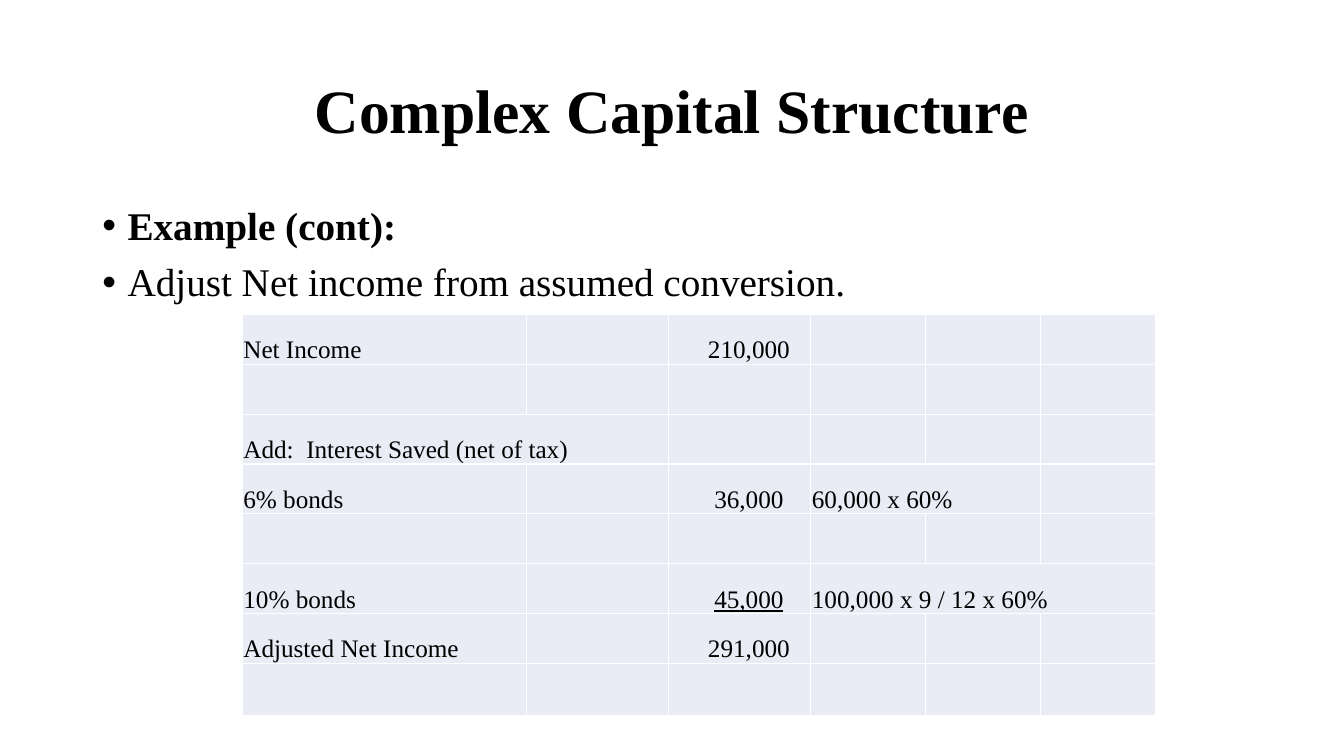
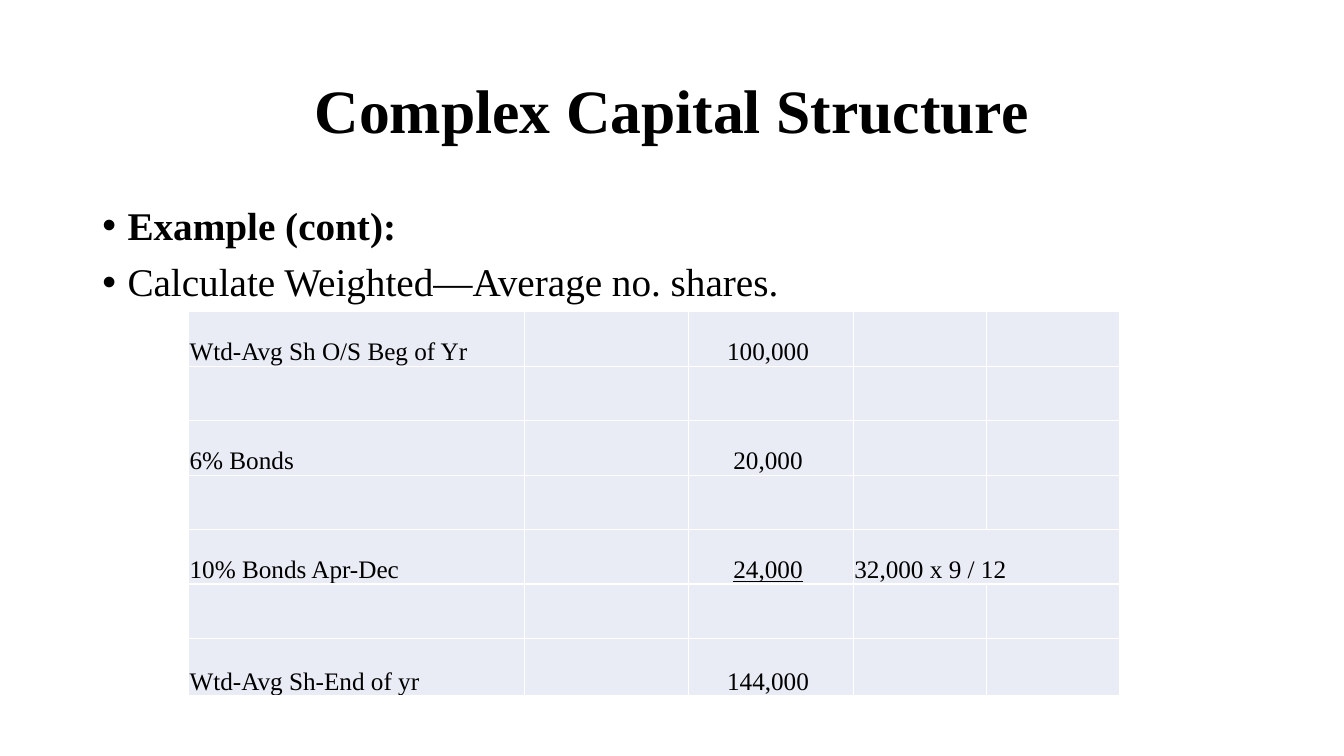
from dataclasses import dataclass

from lxml.etree import SubElement
from pptx import Presentation
from pptx.dml.color import RGBColor
from pptx.enum.text import MSO_ANCHOR as Anchor, PP_ALIGN as Align
from pptx.oxml.ns import qn
from pptx.util import Inches, Pt


@dataclass(frozen=True)
class Theme:
    font: str = "Times New Roman"
    ink: RGBColor = RGBColor(0x00, 0x00, 0x00)
    cell_fill: RGBColor = RGBColor(0xE9, 0xEB, 0xF5)
    border: str = "FFFFFF"
    border_width: int = Pt(1)
    title_size: int = Pt(44)
    body_size: int = Pt(28)
    table_size: int = Pt(18)
    inset: int = Inches(0.01)
    bullet_indent: int = Inches(0.25)


theme = Theme()
presentation = Presentation()
presentation.slide_width = Inches(13.33)
presentation.slide_height = Inches(7.5)

# The page is a grid of 160 columns by 90 rows.
COLUMN = presentation.slide_width / 160
ROW = presentation.slide_height / 90
TEXT_LEFT, TEXT_WIDTH = 11, 138
NUMBER_COLUMN = 2

# Each entry is (row, column): (text, columns spanned).
pages = [
    dict(
        bullet="Adjust Net income from assumed conversion.",
        body_rows=57.1,
        table_at=(28.85, 37.45),
        columns=[33.85, 16.92, 16.92] + [13.68] * 3,
        rows=[5.93] * 7 + [6.24],
        number_insets=(Inches(0.19), theme.inset),
        underlined=(5, NUMBER_COLUMN),
        entries={
            (0, 0): ("Net Income", 1),
            (0, 2): ("210,000", 1),
            (2, 0): ("Add:  Interest Saved (net of tax)", 2),
            (3, 0): ("6% bonds", 1),
            (3, 2): ("36,000", 1),
            (3, 3): ("60,000 x 60%", 2),
            (5, 0): ("10% bonds", 1),
            (5, 2): ("45,000", 1),
            (5, 3): ("100,000 x 9 / 12 x 60%", 3),
            (6, 0): ("Adjusted Net Income", 1),
            (6, 2): ("291,000", 1),
        },
    ),
    dict(
        bullet="Calculate Weighted—Average no. shares.",
        body_rows=61.2,
        table_at=(22.45, 37.1),
        columns=[39.95, 19.6, 19.6] + [15.85] * 2,
        rows=[6.49] * 6 + [6.8],
        number_insets=(theme.inset, Inches(0.07)),
        underlined=(4, NUMBER_COLUMN),
        entries={
            (0, 0): ("Wtd-Avg Sh O/S Beg of Yr", 1),
            (0, 2): ("100,000", 1),
            (2, 0): ("6% Bonds", 1),
            (2, 2): ("20,000", 1),
            (4, 0): ("10% Bonds Apr-Dec", 1),
            (4, 2): ("24,000", 1),
            (4, 3): ("32,000 x 9 / 12", 2),
            (6, 0): ("Wtd-Avg Sh-End of yr", 1),
            (6, 2): ("144,000", 1),
        },
    ),
]


def write(paragraph, text, size, bold=False):
    paragraph.text = text
    paragraph.font.name = theme.font
    paragraph.font.size = size
    paragraph.font.bold = bold
    paragraph.font.color.rgb = theme.ink


def add_text_frame(slide, top, rows):
    """Add a text box across the text columns and return its frame."""
    box = slide.shapes.add_textbox(
        round(TEXT_LEFT * COLUMN), round(top * ROW), round(TEXT_WIDTH * COLUMN), round(rows * ROW)
    )
    box.text_frame.word_wrap = True
    return box.text_frame


for page in pages:
    slide = presentation.slides.add_slide(presentation.slide_layouts[6])

    title_frame = add_text_frame(slide, 4.8, 17.4)
    title_frame.vertical_anchor = Anchor.MIDDLE
    title = title_frame.paragraphs[0]
    write(title, "Complex Capital Structure", theme.title_size, bold=True)
    title.alignment = Align.CENTER
    title.line_spacing = 0.9

    body_frame = add_text_frame(slide, 24, page["body_rows"])
    body_frame.add_paragraph()
    bullets = [("Example (cont):", True), (page["bullet"], False)]
    for paragraph, (text, bold) in zip(body_frame.paragraphs, bullets):
        write(paragraph, text, theme.body_size, bold)
        paragraph.line_spacing = 0.9
        paragraph.space_before = Pt(10)
        properties = paragraph._p.get_or_add_pPr()
        properties.set("marL", str(theme.bullet_indent))
        properties.set("indent", str(-theme.bullet_indent))
        bullet_font = properties.makeelement(qn("a:buFont"), {"typeface": "Arial"})
        bullet = properties.makeelement(qn("a:buChar"), {"char": "•"})
        properties.insert_element_before(bullet_font, "a:tabLst", "a:defRPr", "a:extLst")
        properties.insert_element_before(bullet, "a:tabLst", "a:defRPr", "a:extLst")

    left, top = page["table_at"]
    table = slide.shapes.add_table(
        len(page["rows"]),
        len(page["columns"]),
        round(left * COLUMN),
        round(top * ROW),
        round(sum(page["columns"]) * COLUMN),
        round(sum(page["rows"]) * ROW),
    ).table
    table.first_row = table.horz_banding = False
    for column, width in zip(table.columns, page["columns"]):
        column.width = round(width * COLUMN)
    for row, height in zip(table.rows, page["rows"]):
        row.height = round(height * ROW)

    for cell in table.iter_cells():
        properties = cell._tc.get_or_add_tcPr()
        for side in ("a:lnL", "a:lnR", "a:lnT", "a:lnB"):
            line = SubElement(properties, qn(side), w=str(theme.border_width))
            line_fill = SubElement(line, qn("a:solidFill"))
            SubElement(line_fill, qn("a:srgbClr"), val=theme.border)
        cell.fill.solid()
        cell.fill.fore_color.rgb = theme.cell_fill

    for (row, column), (text, span) in page["entries"].items():
        cell = table.cell(row, column)
        if span > 1:
            cell.merge(table.cell(row, column + span - 1))
        cell.vertical_anchor = Anchor.BOTTOM
        cell.margin_left = cell.margin_right = cell.margin_top = theme.inset
        cell.margin_bottom = 0
        paragraph = cell.text_frame.paragraphs[0]
        write(paragraph, text, theme.table_size)
        if column == NUMBER_COLUMN:
            paragraph.alignment = Align.CENTER
            cell.margin_left, cell.margin_right = page["number_insets"]
        if (row, column) == page["underlined"]:
            paragraph.font.underline = True

presentation.save("out.pptx")
